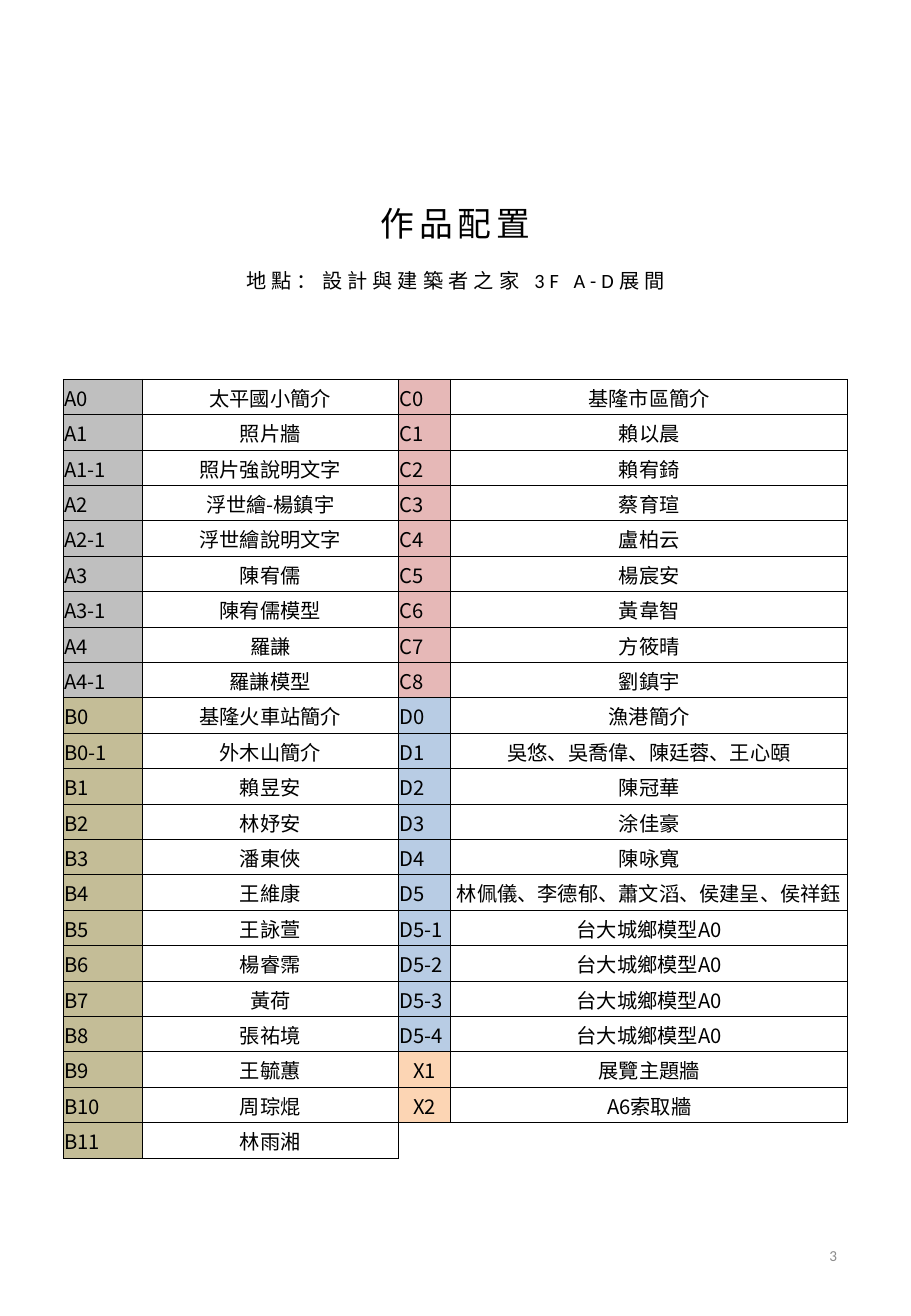
from itertools import zip_longest
from typing import NamedTuple

from lxml.etree import SubElement
from pptx import Presentation
from pptx.dml.color import RGBColor
from pptx.enum.text import MSO_ANCHOR as ANCHOR, MSO_AUTO_SIZE as AUTO, PP_ALIGN as ALIGN
from pptx.oxml.ns import qn
from pptx.util import Pt

PX = 9144  # EMU, 100 px to the inch
CJK = "Noto Sans CJK SC"
COLORS = {"text": "000000", "number": "8C8C8C", "border": "000000",
          "A": "BFBFBF", "B": "C4BD97", "C": "E6B8B7", "D": "B8CCE4", "X": "FCD5B4"}
CELL_FORMAT = {"margin_left": PX, "margin_top": PX, "margin_right": PX,
               "margin_bottom": 0, "vertical_anchor": ANCHOR.MIDDLE}
COLUMNS = (65, 211, 43, 327)


class Work(NamedTuple):
    code: str
    name: str


class Line(NamedTuple):
    text: str
    size: int
    spacing: float


HEADING = [Line("作品配置", 20, 2.5), Line("地點：設計與建築者之家 3F A-D展間", 12, 2.0)]

LEFT = [
    Work("A0", "太平國小簡介"), Work("A1", "照片牆"), Work("A1-1", "照片強說明文字"),
    Work("A2", "浮世繪-楊鎮宇"), Work("A2-1", "浮世繪說明文字"), Work("A3", "陳宥儒"),
    Work("A3-1", "陳宥儒模型"), Work("A4", "羅謙"), Work("A4-1", "羅謙模型"),
    Work("B0", "基隆火車站簡介"), Work("B0-1", "外木山簡介"), Work("B1", "賴昱安"),
    Work("B2", "林妤安"), Work("B3", "潘東俠"), Work("B4", "王維康"),
    Work("B5", "王詠萱"), Work("B6", "楊睿霈"), Work("B7", "黃荷"),
    Work("B8", "張祐境"), Work("B9", "王毓蕙"), Work("B10", "周琮焜"),
    Work("B11", "林雨湘"),
]
RIGHT = [
    Work("C0", "基隆市區簡介"), Work("C1", "賴以晨"), Work("C2", "賴宥錡"),
    Work("C3", "蔡育瑄"), Work("C4", "盧柏云"), Work("C5", "楊宸安"),
    Work("C6", "黃韋智"), Work("C7", "方筱晴"), Work("C8", "劉鎮宇"),
    Work("D0", "漁港簡介"), Work("D1", "吳悠、吳喬偉、陳廷蓉、王心頤"), Work("D2", "陳冠華"),
    Work("D3", "涂佳豪"), Work("D4", "陳咏寬"),
    Work("D5", "林佩儀、李德郁、蕭文滔、侯建呈、侯祥鈺"),
    *(Work(f"D5-{i}", "台大城鄉模型A0") for i in range(1, 5)),
    Work("X1", "展覽主題牆"), Work("X2", "A6索取牆"),
]


def add_text(p, text: str, size: int, font: str, color: str = "text",
             align: ALIGN = ALIGN.CENTER):
    p.alignment = align
    r = p.add_run()
    r.text = text
    r.font.size, r.font.name = Pt(size), font
    r.font.color.rgb = RGBColor.from_string(COLORS[color])
    SubElement(r.font._element, qn("a:ea"), typeface=CJK)
    return r


def set_borders(cell, sides: str) -> None:
    """Draw the given sides (from L, R, T, B) and clear the others."""
    tc_pr = cell._tc.get_or_add_tcPr()
    for side in "LRTB":
        ln = SubElement(tc_pr, qn(f"a:ln{side}"), w=str(Pt(0.5)))
        if side in sides:
            fill = SubElement(ln, qn("a:solidFill"))
            SubElement(fill, qn("a:srgbClr"), val=COLORS["border"])
        else:
            SubElement(ln, qn("a:noFill"))


def format_cell(cell, sides: str = "LRTB", fill: str = "") -> None:
    for key, value in CELL_FORMAT.items():
        setattr(cell, key, value)
    set_borders(cell, sides)
    if fill:
        cell.fill.solid()
        cell.fill.fore_color.rgb = RGBColor.from_string(COLORS[fill])
    else:
        cell.fill.background()


def fill_pair(code_cell, name_cell, work: Work | None) -> None:
    """Fill a code cell and its name cell, or leave both open when there is no work."""
    if work is None:
        for cell, sides in ((code_cell, "LT"), (name_cell, "T")):
            format_cell(cell, sides)
            end = cell.text_frame.paragraphs[0]._p.get_or_add_endParaRPr()
            end.set("sz", "1200")
        return
    area = work.code[0]
    format_cell(code_cell, fill=area)
    format_cell(name_cell)
    align = ALIGN.CENTER if area == "X" else ALIGN.LEFT
    add_text(code_cell.text_frame.paragraphs[0], work.code, 12, CJK, align=align)
    add_text(name_cell.text_frame.paragraphs[0], work.name, 12, CJK)


def add_heading(s) -> None:
    title = s.shapes.title
    box = {"left": 0, "top": 112, "width": 750, "height": 130}
    for key, value in box.items():
        setattr(title, key, value * PX)
    tf = title.text_frame
    tf.auto_size, tf.vertical_anchor, tf.word_wrap = AUTO.SHAPE_TO_FIT_TEXT, ANCHOR.TOP, True
    for i, line in enumerate(HEADING):
        p = tf.add_paragraph() if i else tf.paragraphs[0]
        p.line_spacing = line.spacing
        r = add_text(p, line.text, line.size, "Calibri")
        r.font._element.set("spc", "300")


def add_works_table(s) -> None:
    frame = s.shapes.add_table(len(LEFT), len(COLUMNS), 52 * PX, 312 * PX,
                               sum(COLUMNS) * PX, 641 * PX)
    table = frame.table
    table.first_row = table.horz_banding = False
    for column, width in zip(table.columns, COLUMNS):
        column.width = width * PX
    for row, works in zip(table.rows, zip_longest(LEFT, RIGHT)):
        cells = list(row.cells)
        for i, work in enumerate(works):
            fill_pair(cells[2 * i], cells[2 * i + 1], work)


def add_page_number(s) -> None:
    tf = s.shapes.add_textbox(530 * PX, 1004 * PX, 169 * PX, 58 * PX).text_frame
    tf.word_wrap, tf.vertical_anchor = True, ANCHOR.MIDDLE
    add_text(tf.paragraphs[0], "3", 9, "Calibri", "number", ALIGN.RIGHT)


def main() -> None:
    prs = Presentation()
    prs.slide_width, prs.slide_height = 750 * PX, 1083 * PX
    s = prs.slides.add_slide(prs.slide_layouts[5])
    add_heading(s)
    add_page_number(s)
    add_works_table(s)
    prs.save("out.pptx")


if __name__ == "__main__":
    main()
